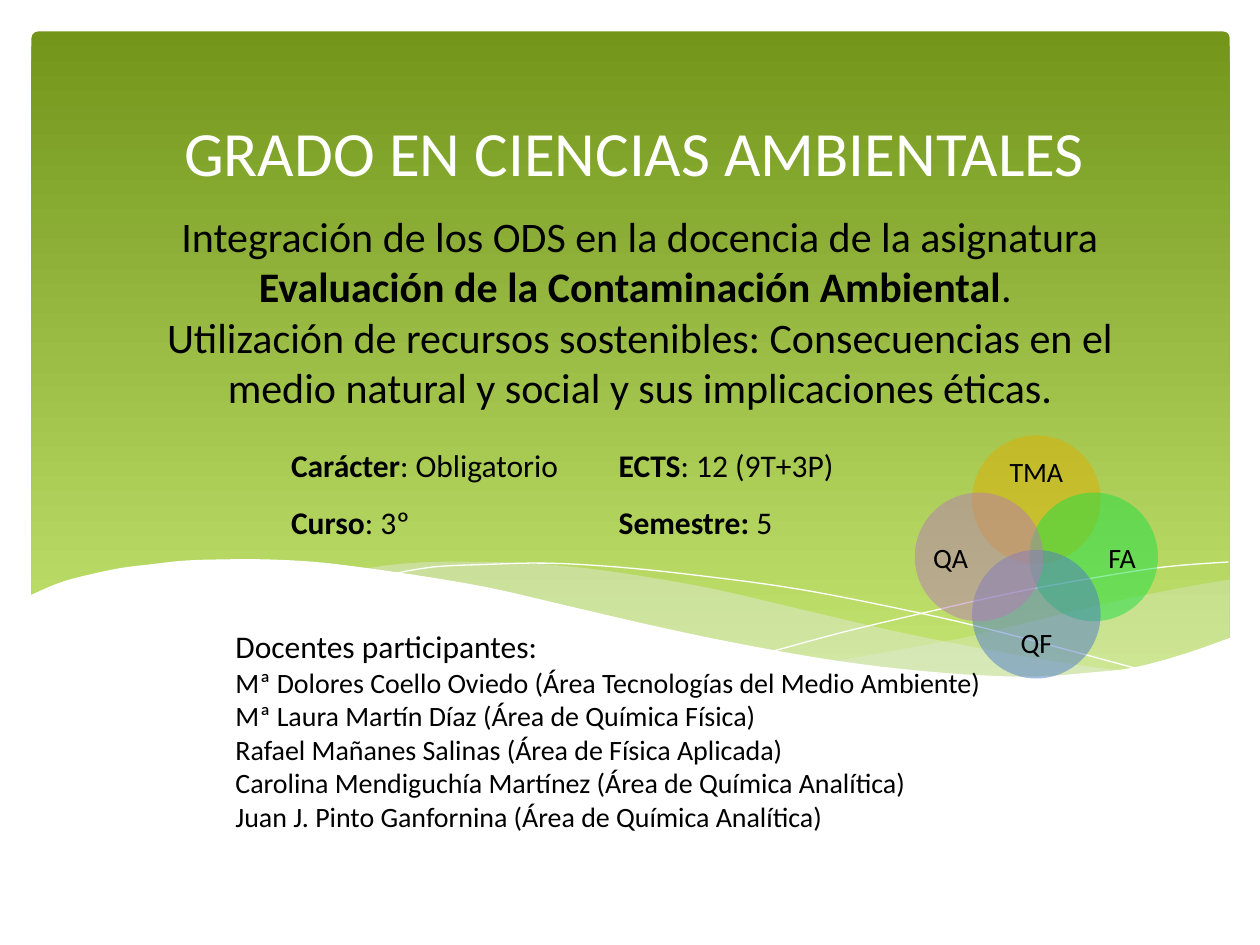
from lxml import etree
from pptx import Presentation
from pptx.dml.color import RGBColor
from pptx.enum.shapes import MSO_SHAPE
from pptx.enum.text import MSO_ANCHOR, PP_ALIGN
from pptx.oxml.ns import qn
from pptx.util import Inches, Pt

# Square grid of 100 columns by 75 rows
COLUMNS, ROWS = 100, 75
CELL = Inches(0.1)
FONT = "Calibri"
TITLE_ONLY = 5
NO_GRID_STYLE = "{2D5ABB26-0587-4C30-8999-92F81FD0307C}"
CENTER, LEFT, JUSTIFY = PP_ALIGN.CENTER, PP_ALIGN.LEFT, PP_ALIGN.JUSTIFY
TOP, MIDDLE, BOTTOM = MSO_ANCHOR.TOP, MSO_ANCHOR.MIDDLE, MSO_ANCHOR.BOTTOM

COLORS = {
    "dark_green": "72951A", "light_green": "C5E672", "veil": "E7ECED",
    "white": "FFFFFF", "black": "000000", "gold": "DEAE00",
    "green": "1DDD45", "blue": "4E7BC8", "mauve": "B77BB4",
}

HILL = [(97.7, 50.6), (94, 51.9), (89.9, 53), (86.3, 53.4), (82.3, 53.7),
        (77.8, 53.6), (72.6, 53.2), (66.8, 52.5), (60.3, 51.4), (52.9, 49.9),
        (44.7, 48), (39.1, 46.7), (34, 45.8), (29.2, 45.1), (25, 44.6),
        (21.1, 44.4), (17.7, 44.4), (14.6, 44.5), (11.9, 44.8), (9.5, 45.1),
        (6.7, 45.7), (4.6, 46.3), (2.3, 47.3)]
HILL_BASE = [(2.3, 58.9), (97.7, 58.9)]
RIGHT_VEIL_TOP = [(97.6, 46), (93.5, 46.7), (89.1, 47.6), (83.2, 49),
                  (77.9, 50.3), (72.9, 51.3), (66.1, 52.5)]
RIGHT_VEIL_BOTTOM = [(66.1, 52.5), (70.5, 53.1), (75.7, 53.6), (81.4, 53.8),
                     (86.3, 53.5), (90.5, 52.9), (94.2, 51.9), (97.6, 50.7)]
LEFT_VEIL_TOP = [(89.3, 53.3), (83.7, 52.5), (77.5, 51.4), (70.6, 50),
                 (62.9, 48.2), (56.9, 46.8), (51.4, 45.8), (46.5, 45.1),
                 (42, 44.7), (38, 44.6), (34.4, 44.6), (31.3, 44.8), (28.6, 45.2)]
LEFT_VEIL_BOTTOM = [(28.6, 45.2), (34.2, 45.9), (40.4, 47.1), (44.9, 48.2),
                    (53, 50.1), (60.1, 51.5), (66.5, 52.6), (72.2, 53.4),
                    (77.3, 53.8), (81.8, 53.9), (85.7, 53.7), (89.3, 53.3)]
FALLING_LINE = [(30.9, 45.6), (34.4, 45), (38.7, 44.8), (43.3, 44.7),
                (48.9, 45), (55.6, 45.7), (63.6, 46.8), (72.7, 48.6),
                (79.5, 50.2), (90.7, 53.2)]
RISING_LINE = [(61.3, 51.7), (67.2, 50.1), (74.8, 48.3), (80.6, 47),
               (86.6, 45.9), (92.4, 45), (97.5, 44.6)]

HEADING = "GRADO EN CIENCIAS AMBIENTALES"
TEACHERS = [
    "Mª Dolores Coello Oviedo (Área Tecnologías del Medio Ambiente)",
    "Mª Laura Martín Díaz (Área de Química Física)",
    "Rafael Mañanes Salinas (Área de Física Aplicada)",
    "Carolina Mendiguchía Martínez (Área de Química Analítica)",
    "Juan J. Pinto Ganfornina (Área de Química Analítica)",
]
COURSE_FACTS = [
    [("Carácter", ": Obligatorio"), ("ECTS", ": 12 (9T+3P)")],
    [("Curso", ": 3º"), ("Semestre: ", "5")],
]
# Area, colour and direction from the middle of the diagram
AREAS = [("TMA", "gold", 0, -1), ("FA", "green", 1, 0),
         ("QF", "blue", 0, 1), ("QA", "mauve", -1, 0)]


def cells(*lengths):
    return [round(length * CELL) for length in lengths]


def rgb(name):
    return RGBColor.from_string(COLORS[name])


def paint(shape, color, opacity=100):
    shape.shadow.inherit = False
    shape.line.fill.background()
    shape.fill.solid()
    shape.fill.fore_color.rgb = rgb(color)
    if opacity < 100:
        tint = shape.fill._xPr.find(qn("a:solidFill"))[0]
        etree.SubElement(tint, qn("a:alpha"), val=str(opacity * 1000))


def smooth(anchors, steps=4):
    """Points of a Catmull-Rom curve through the anchors."""
    padded = [anchors[0], *anchors, anchors[-1]]
    points = [anchors[0]]
    for a, b, c, d in zip(padded, padded[1:], padded[2:], padded[3:]):
        for step in range(1, steps + 1):
            t = step / steps
            points.append(tuple(
                q + t / 2 * (r - p + t * (2 * p - 5 * q + 4 * r - s
                                          + t * (3 * q - p - 3 * r + s)))
                for p, q, r, s in zip(a, b, c, d)))
    return points


def add_outline(slide, points, close=True):
    start, *rest = [cells(*point) for point in points]
    builder = slide.shapes.build_freeform(*start)
    builder.add_line_segments(rest, close=close)
    return builder.convert_to_shape()


def add_wave_line(slide, anchors):
    wave = add_outline(slide, smooth(anchors), close=False)
    wave.shadow.inherit = False
    wave.fill.background()
    wave.line.color.rgb = rgb("white")
    wave.line.width = Pt(0)


def add_run(paragraph, text, size, color="black", bold=False):
    run = paragraph.add_run()
    run.text = text
    run.font.name = FONT
    run.font.size = Pt(size)
    run.font.bold = bold
    run.font.color.rgb = rgb(color)


def set_frame(frame, anchor=TOP, inset=None):
    frame.word_wrap = True
    frame.vertical_anchor = anchor
    if inset is not None:
        frame.margin_left = frame.margin_right = inset
        frame.margin_top = frame.margin_bottom = inset


def add_text(slide, box, lines, align=LEFT, anchor=TOP, inset=None, color="black"):
    """Lines are pairs of text and size, one paragraph each."""
    frame = slide.shapes.add_textbox(*cells(*box)).text_frame
    set_frame(frame, anchor, inset)
    for index, (text, size) in enumerate(lines):
        paragraph = frame.add_paragraph() if index else frame.paragraphs[0]
        paragraph.alignment = align
        add_run(paragraph, text, size, color)


def add_backdrop(slide):
    panel = slide.shapes.add_shape(
        MSO_SHAPE.ROUNDED_RECTANGLE, *cells(2.5, 2.5, 95.1, 51.8))
    panel.adjustments[0] = 0.01
    paint(panel, "light_green")
    panel.fill.gradient()
    panel.fill.gradient_angle = 270
    for stop, color, position in zip(
            panel.fill.gradient_stops, ("dark_green", "light_green"), (0, 1)):
        stop.color.rgb = rgb(color)
        stop.position = position

    paint(add_outline(slide, smooth(RIGHT_VEIL_TOP) + smooth(RIGHT_VEIL_BOTTOM)),
          "veil", 29)
    paint(add_outline(slide, smooth(LEFT_VEIL_TOP) + smooth(LEFT_VEIL_BOTTOM)),
          "veil", 40)
    add_wave_line(slide, FALLING_LINE)
    add_wave_line(slide, RISING_LINE)
    paint(add_outline(slide, smooth(HILL) + HILL_BASE), "white")


def fill_title(slide):
    title = slide.shapes.title
    slide.shapes._spTree.append(title._element)  # in front of the backdrop
    title.left, title.top, title.width, title.height = cells(8.3, 16.2, 85, 16.7)
    set_frame(title.text_frame)
    paragraph = title.text_frame.paragraphs[0]
    paragraph.alignment = CENTER
    add_run(paragraph, "Integración de los ODS en la docencia de la asignatura ", 24)
    add_run(paragraph, "Evaluación de la Contaminación Ambiental", 24, bold=True)
    add_run(paragraph, ". ", 24)
    paragraph.add_line_break()
    add_run(paragraph, "Utilización de recursos sostenibles: Consecuencias en el "
                       "medio natural y social y sus implicaciones éticas.", 24)


def add_course_table(slide):
    table = slide.shapes.add_table(2, 2, *cells(22.4, 34, 48.8, 9)).table
    table.first_row = table.horz_banding = False
    table._tbl.tblPr.find(qn("a:tableStyleId")).text = NO_GRID_STYLE
    for column, width in zip(table.columns, cells(26, 22.8)):
        column.width = width
    for row, facts in zip(table.rows, COURSE_FACTS):
        for cell, (label, value) in zip(row.cells, facts):
            cell.fill.background()
            cell.margin_left = cell.margin_right = Inches(0.07)
            cell.margin_top = cell.margin_bottom = 0
            paragraph = cell.text_frame.paragraphs[0]
            paragraph.alignment = JUSTIFY
            paragraph.line_spacing = 1.5
            add_run(paragraph, label, 18, bold=True)
            add_run(paragraph, value, 18)


def add_area_diagram(slide, x=82.25, y=44.2, diameter=10.2, shift=4.55, label_shift=6.8):
    for area, color, dx, dy in AREAS:
        left = x + dx * shift - diameter / 2
        top = y + dy * shift - diameter / 2
        circle = slide.shapes.add_shape(
            MSO_SHAPE.OVAL, *cells(left, top, diameter, diameter))
        paint(circle, color, 50)
        width, height = (3.9, 7.9) if dx else (7.9, 3.2)
        label_box = (x + dx * label_shift - width / 2,
                     y + dy * label_shift - height / 2, width, height)
        add_text(slide, label_box, [(area, 16)], CENTER, MIDDLE, inset=0)


def main():
    presentation = Presentation()
    presentation.slide_width, presentation.slide_height = cells(COLUMNS, ROWS)
    slide = presentation.slides.add_slide(presentation.slide_layouts[TITLE_ONLY])
    add_backdrop(slide)
    fill_title(slide)
    add_text(slide, (9.8, 7.6, 81.1, 7.9), [(HEADING, 36)], CENTER, BOTTOM,
             color="white")
    add_text(slide, (17.7, 49.3, 70.9, 17.5),
             [("Docentes participantes:", 18)] + [(name, 16) for name in TEACHERS])
    add_course_table(slide)
    add_area_diagram(slide)
    presentation.save("out.pptx")


if __name__ == "__main__":
    main()
